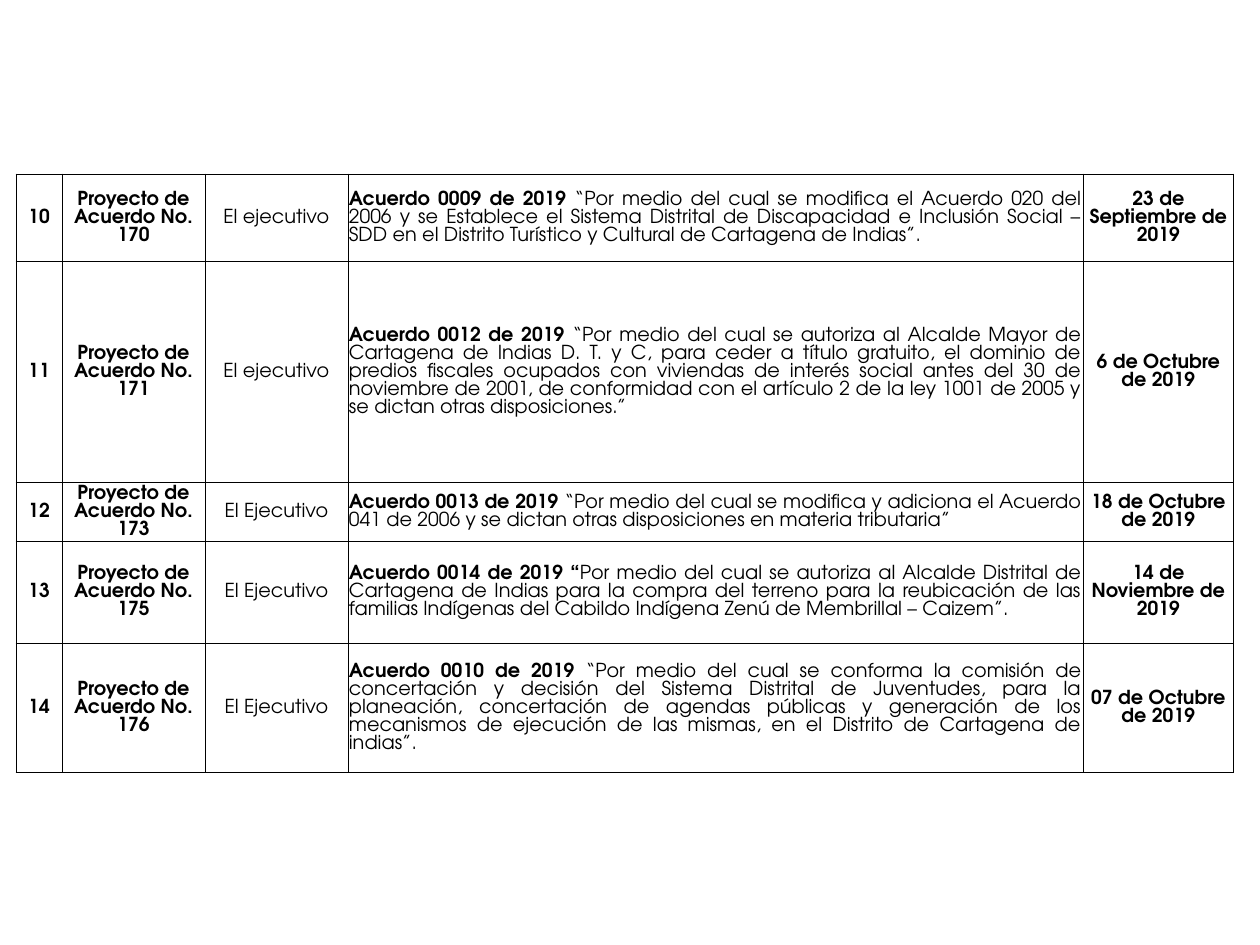
from lxml import etree
from pptx import Presentation
from pptx import util as u
from pptx.dml.color import RGBColor
from pptx.enum import text
from pptx.oxml.ns import qn

AGREEMENTS = [
    ("10", "170", "El ejecutivo", "Acuerdo 0009 de 2019 ",
     "“Por medio del cual se modifica el Acuerdo 020 del 2006 y se Establece el Sistema "
     "Distrital de Discapacidad e Inclusión Social –SDD en el Distrito Turístico y Cultural "
     "de Cartagena de Indias”.",
     "23 de Septiembre de 2019"),
    ("11", "171", "El ejecutivo", "Acuerdo 0012 de 2019 ",
     "“Por medio del cual se autoriza al Alcalde Mayor de Cartagena de Indias D. T. y C, para "
     "ceder a título gratuito, el dominio de predios fiscales ocupados con viviendas de interés "
     "social antes del 30 de noviembre de 2001, de conformidad con el artículo 2 de la ley 1001 "
     "de 2005 y se dictan otras disposiciones.”",
     "6 de Octubre de 2019"),
    ("12", "173", "El Ejecutivo", "Acuerdo 0013 de 2019 ",
     "“Por medio del cual se modifica y adiciona el Acuerdo 041 de 2006 y se dictan otras "
     "disposiciones en materia tributaria”",
     "18 de Octubre de 2019"),
    ("13", "175", "El Ejecutivo", "Acuerdo 0014 de 2019 “",
     "Por medio del cual se autoriza al Alcalde Distrital de Cartagena de Indias para la compra "
     "del terreno para la reubicación de las familias Indígenas del Cabildo Indígena Zenú de "
     "Membrillal – Caizem”.",
     "14 de Noviembre de 2019"),
    ("14", "176", "El Ejecutivo", "Acuerdo 0010 de 2019 ",
     "“Por medio del cual se conforma la comisión de concertación y decisión del Sistema "
     "Distrital de Juventudes, para la planeación, concertación de agendas públicas y generación "
     "de los mecanismos de ejecución de las mismas, en el Distrito de Cartagena de indias”.",
     "07 de Octubre de 2019"),
]

PX = u.Inches(1) // 126
LEFT, TOP = 16, 174
COLUMN_WIDTHS = [46, 143, 143, 735, 151]
ROW_HEIGHTS = [87, 221, 59, 102, 130]
BLACK = RGBColor(0, 0, 0)
FONT = "TeX Gyre Adventor"


def add_borders(cell):
    properties = cell._tc.get_or_add_tcPr()
    for side in ("a:lnL", "a:lnR", "a:lnT", "a:lnB"):
        line = etree.SubElement(properties, qn(side), w=str(u.Pt(0.5)))
        fill = etree.SubElement(line, qn("a:solidFill"))
        etree.SubElement(fill, qn("a:srgbClr"), val=str(BLACK))


def fill_cell(cell, runs, align):
    """Write (words, bold) runs into a bordered, unfilled cell."""
    cell.margin_left = cell.margin_right = cell.margin_top = PX
    cell.margin_bottom = 0
    cell.vertical_anchor = text.MSO_ANCHOR.MIDDLE
    add_borders(cell)
    cell.fill.background()
    paragraph = cell.text_frame.paragraphs[0]
    paragraph.alignment = align
    for words, bold in runs:
        run = paragraph.add_run()
        run.text = words
        font = run.font
        font.name, font.size, font.bold = FONT, u.Pt(11), bold
        font.color.rgb = BLACK


def main():
    deck = Presentation()
    deck.slide_width, deck.slide_height = u.Inches(10), u.Inches(7.5)
    slide = deck.slides.add_slide(deck.slide_layouts[6])
    table = slide.shapes.add_table(
        len(AGREEMENTS), len(COLUMN_WIDTHS), LEFT * PX, TOP * PX,
        sum(COLUMN_WIDTHS) * PX, sum(ROW_HEIGHTS) * PX).table
    table.first_row = table.horz_banding = False
    for column, width in zip(table.columns, COLUMN_WIDTHS):
        column.width = width * PX
    for row, height, agreement in zip(table.rows, ROW_HEIGHTS, AGREEMENTS):
        row.height = height * PX
        number, project, author, title, subject, date = agreement
        contents = [
            [(number, True)],
            [(f"Proyecto de Acuerdo No. {project}", True)],
            [(author, False)],
            [(title, True), (subject, False)],
            [(date, True)],
        ]
        for cell, runs in zip(row.cells, contents):
            justified = len(runs) > 1
            fill_cell(cell, runs, text.PP_ALIGN.JUSTIFY if justified else text.PP_ALIGN.CENTER)
    deck.save("out.pptx")


if __name__ == "__main__":
    main()
